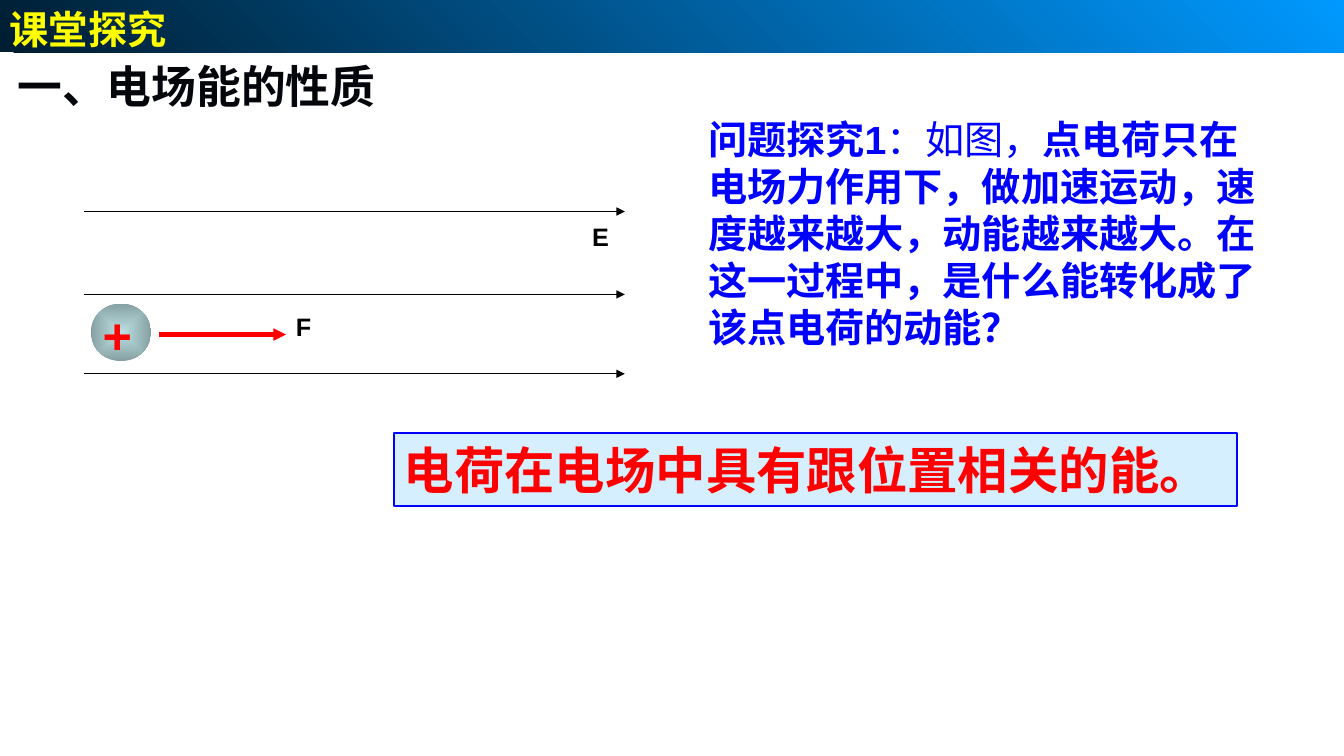
"""Build a physics slide about the energy of a charge in an electric field."""
from dataclasses import dataclass

from lxml import etree
from pptx import Presentation
from pptx.dml.color import RGBColor
from pptx.enum.shapes import MSO_CONNECTOR, MSO_SHAPE
from pptx.enum.text import MSO_ANCHOR, MSO_AUTO_SIZE, PP_ALIGN
from pptx.oxml.ns import qn
from pptx.util import Cm, Pt

STRAIGHT = MSO_CONNECTOR.STRAIGHT
RECTANGLE, OVAL = MSO_SHAPE.RECTANGLE, MSO_SHAPE.OVAL
TOP, MIDDLE = MSO_ANCHOR.TOP, MSO_ANCHOR.MIDDLE
LEFT, NO_AUTOFIT = PP_ALIGN.LEFT, MSO_AUTO_SIZE.NONE
TITLE_ONLY_LAYOUT = 5


@dataclass(frozen=True)
class Theme:
    """Colours, fonts and type sizes of the slide."""
    black: str = "000000"
    heading: str = "04060C"
    blue: str = "0000FF"
    red: str = "FF0000"
    yellow: str = "FFFF00"
    panel: str = "CCECFF"
    banner: tuple = ("001D31", "0099FF")
    sphere: tuple = ("BBE0E3", "86A0A2")
    latin: str = "Arial"
    chinese: str = "Noto Sans CJK SC"
    label_size: int = 18
    text_size: int = 28
    heading_size: int = 32
    large_size: int = 36


THEME = Theme()
SLIDE_SIZE = (33.88, 19.05)
BANNER_HEIGHT = 1.32
SECTION = "课堂探究"
HEADING = "一、电场能的性质"
QUESTION = [
    ("问题探究1", True),
    ("：如图，", False),
    ("点电荷只在电场力作用下，做加速运动，速度越来越大，动能越来越大。"
     "在这一过程中，是什么能转化成了该点电荷的动能？", True),
]
CONCLUSION = "电荷在电场中具有跟位置相关的能。"
FIELD_LEFT, FIELD_RIGHT = 2.13, 15.75
FIELD_LEVELS = (5.33, 7.42, 9.42)
CHARGE_BOX = (2.29, 7.65, 1.52, 1.45)
FORCE_START, FORCE_END, FORCE_LEVEL = 4.01, 7.21, 8.43
LABELS = [
    ("E", (14.68, 5.44, 3.86, 1.02), THEME.label_size, THEME.black),
    ("+", (2.34, 7.54, 1.6, 1.78), THEME.large_size, THEME.red),
    ("F", (7.21, 7.72, 1.88, 1.02), THEME.label_size, THEME.black),
]


def lengths(values):
    return [Cm(value) for value in values]


def write_text(shape, text, *, size, color, font=THEME.chinese, anchor=TOP):
    """Fill a shape with one string or with (string, bold) pieces."""
    frame = shape.text_frame
    frame.word_wrap = True
    frame.auto_size = NO_AUTOFIT
    frame.vertical_anchor = anchor
    paragraph = frame.paragraphs[0]
    paragraph.alignment = LEFT
    for piece, bold in [(text, True)] if isinstance(text, str) else text:
        run = paragraph.add_run()
        run.text = piece
        run.font.size = Pt(size)
        run.font.bold = bold
        run.font.name = font
        run.font.color.rgb = RGBColor.from_string(color)
        east_asian = etree.Element(qn("a:ea"), typeface=THEME.chinese)
        run.font._element.find(qn("a:latin")).addnext(east_asian)


def add_text(slide, text, box, **text_format):
    write_text(slide.shapes.add_textbox(*lengths(box)), text, **text_format)


def add_plain_shape(slide, kind, box):
    shape = slide.shapes.add_shape(kind, *lengths(box))
    shape.shadow.inherit = False
    shape.line.fill.background()
    return shape


def fill_gradient(shape, colors, angle=0):
    shape.fill.gradient()
    shape.fill.gradient_angle = angle
    for position, (stop, color) in enumerate(zip(shape.fill.gradient_stops, colors)):
        stop.position = position
        stop.color.rgb = RGBColor.from_string(color)


def add_arrow(slide, start, end, level, color, width):
    arrow = slide.shapes.add_connector(STRAIGHT, *lengths((start, level, end, level)))
    arrow.line.color.rgb = RGBColor.from_string(color)
    arrow.line.width = Pt(width)
    etree.SubElement(arrow.line._get_or_add_ln(), qn("a:tailEnd"), type="triangle")
    etree.SubElement(arrow._element.spPr, qn("a:effectLst"))


def add_charge(slide):
    charge = add_plain_shape(slide, OVAL, CHARGE_BOX)
    fill_gradient(charge, THEME.sphere)
    linear = charge._element.spPr.find(qn("a:gradFill")).find(qn("a:lin"))
    radial = etree.Element(qn("a:path"), {"path": "shape"})
    etree.SubElement(radial, qn("a:fillToRect"), dict.fromkeys("ltrb", "50000"))
    linear.getparent().replace(linear, radial)


def add_conclusion(slide):
    panel = add_plain_shape(slide, RECTANGLE, (9.93, 10.92, 21.26, 1.83))
    panel.fill.solid()
    panel.fill.fore_color.rgb = RGBColor.from_string(THEME.panel)
    color = panel._element.spPr.find(qn("a:solidFill")).find(qn("a:srgbClr"))
    etree.SubElement(color, qn("a:alpha"), val="80000")
    panel.line.color.rgb = RGBColor.from_string(THEME.blue)
    panel.line.width = Pt(1.5)
    write_text(panel, CONCLUSION, size=THEME.large_size, color=THEME.red, anchor=MIDDLE)


def main():
    presentation = Presentation()
    presentation.slide_width, presentation.slide_height = lengths(SLIDE_SIZE)
    slide = presentation.slides.add_slide(presentation.slide_layouts[TITLE_ONLY_LAYOUT])

    banner = add_plain_shape(slide, RECTANGLE, (0, 0, SLIDE_SIZE[0], BANNER_HEIGHT))
    fill_gradient(banner, THEME.banner, angle=45)
    add_text(slide, SECTION, (0, 0, 6.35, 1.45), size=THEME.text_size, color=THEME.yellow)

    title = slide.shapes.title
    title.left, title.top, title.width, title.height = lengths((0.18, 1.35, 12.88, 1.63))
    write_text(title, HEADING, size=THEME.heading_size, color=THEME.heading)

    for level in FIELD_LEVELS:
        add_arrow(slide, FIELD_LEFT, FIELD_RIGHT, level, THEME.black, 0.75)
    add_charge(slide)
    add_arrow(slide, FORCE_START, FORCE_END, FORCE_LEVEL, THEME.red, 3)
    for text, box, size, color in LABELS:
        add_text(slide, text, box, size=size, color=color, font=THEME.latin)

    add_text(slide, QUESTION, (17.6, 2.77, 14.66, 6.25),
             size=THEME.text_size, color=THEME.blue, font=THEME.latin)
    add_conclusion(slide)
    presentation.save("out.pptx")


if __name__ == "__main__":
    main()
